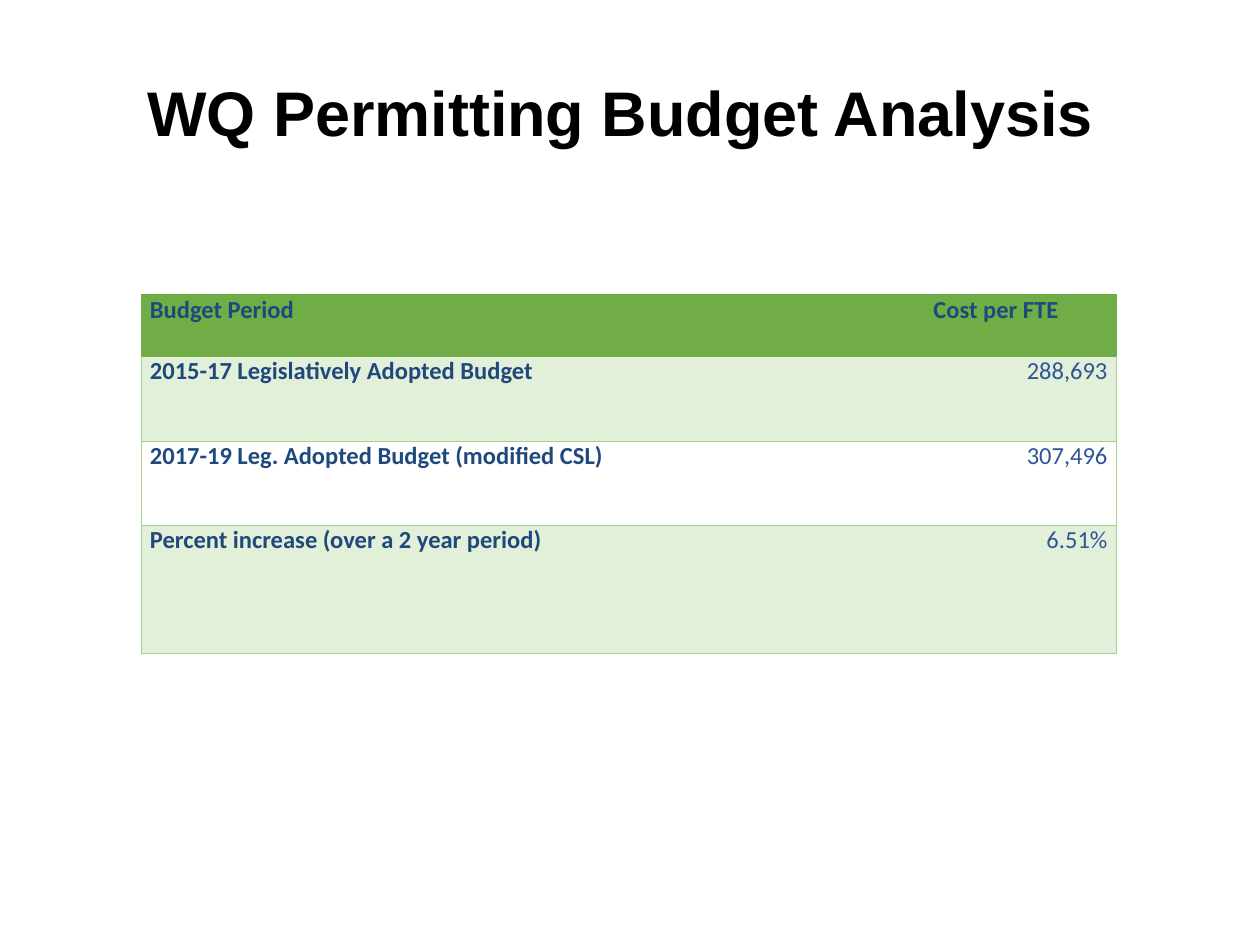
from pptx import Presentation
from pptx.dml.color import RGBColor
from pptx.enum.text import MSO_ANCHOR, PP_ALIGN
from pptx.oxml.ns import qn
from pptx.util import Inches, Pt
from lxml import etree

LEFT, CENTER, RIGHT = PP_ALIGN.LEFT, PP_ALIGN.CENTER, PP_ALIGN.RIGHT
TOP = MSO_ANCHOR.TOP
TITLE_ONLY = 5
NO_STYLE = "{2D5ABB26-0587-4C30-8999-92F81FD0307C}"

ROWS = [
    ("Budget Period", "Cost per FTE"),
    ("2015-17 Legislatively Adopted Budget", "288,693"),
    ("2017-19 Leg. Adopted Budget (modified CSL)", "307,496"),
    ("Percent increase (over a 2 year period)", "6.51%"),
]
COLUMN_WIDTHS = [5.83, 1.91]
ROW_HEIGHTS = [0.49, 0.67, 0.67, 1.02]


def rgb(value):
    return RGBColor.from_string(value)


class SlideBuilder:
    """Holds the style and the current slide."""
    title_font, table_font = "Arial", "Calibri"
    black, navy, blue = "000000", "1F497D", "2F5597"
    green, pale, edge = "70AD47", "E2EFD9", "A8D08D"

    def __init__(self, deck):
        self.slide = deck.slides.add_slide(deck.slide_layouts[TITLE_ONLY])

    def format_text(self, para, font, size, color, bold, align):
        para.alignment = align
        for span in para.runs:
            span.font.name = font
            span.font.size = Pt(size)
            span.font.bold = bold
            span.font.color.rgb = rgb(color)

    def title(self, text, left, top, width, height):
        box = self.slide.shapes.title
        box.left, box.top = Inches(left), Inches(top)
        box.width, box.height = Inches(width), Inches(height)
        frame = box.text_frame
        frame.text = text
        frame.vertical_anchor = TOP
        para = frame.paragraphs[0]
        para.space_before = Pt(4)
        self.format_text(para, self.title_font, 36, self.black, True, LEFT)

    def border(self, cell, side, color):
        properties = cell._tc.get_or_add_tcPr()
        line = etree.SubElement(properties, qn(f"a:ln{side}"), w=str(Pt(0.5)))
        fill = etree.SubElement(line, qn("a:solidFill"))
        etree.SubElement(fill, qn("a:srgbClr"), val=color)

    def cell(self, cell, text, row, column):
        header, label = row == 0, column == 0
        cell.margin_left = cell.margin_right = Inches(0.07)
        cell.margin_top = cell.margin_bottom = 0
        cell.vertical_anchor = TOP
        cell.text = text
        align = LEFT if label else CENTER if header else RIGHT
        bold = header or label
        color = self.navy if bold else self.blue
        self.format_text(cell.text_frame.paragraphs[0], self.table_font, 14,
                         color, bold, align)

        # Outer sides and row rules, without a rule between the columns
        own = self.green if header else self.edge
        self.border(cell, "L" if label else "R", own)
        self.border(cell, "T", self.green if row <= 1 else self.edge)
        self.border(cell, "B", own)

        # Header colour, then alternate bands
        if header or row % 2:
            cell.fill.solid()
            cell.fill.fore_color.rgb = rgb(self.green if header else self.pale)
        else:
            cell.fill.background()

    def table(self, rows, left, top, widths, heights):
        frame = self.slide.shapes.add_table(
            len(rows), len(widths), Inches(left), Inches(top),
            Inches(sum(widths)), Inches(sum(heights)))
        table = frame.table
        table._tbl.tblPr.find(qn("a:tableStyleId")).text = NO_STYLE
        table.horz_banding = False
        for column, width in zip(table.columns, widths):
            column.width = Inches(width)
        for row, height in zip(table.rows, heights):
            row.height = Inches(height)
        for r, texts in enumerate(rows):
            for c, text in enumerate(texts):
                self.cell(table.cell(r, c), text, r, c)


def main():
    deck = Presentation()
    deck.slide_width, deck.slide_height = Inches(10), Inches(7.5)
    builder = SlideBuilder(deck)

    # Heading
    builder.title("WQ Permitting Budget Analysis", 1.07, 0.53, 7.83, 5.17)

    # Budget table
    builder.table(ROWS, 1.12, 2.34, COLUMN_WIDTHS, ROW_HEIGHTS)

    deck.save("out.pptx")


if __name__ == "__main__":
    main()
